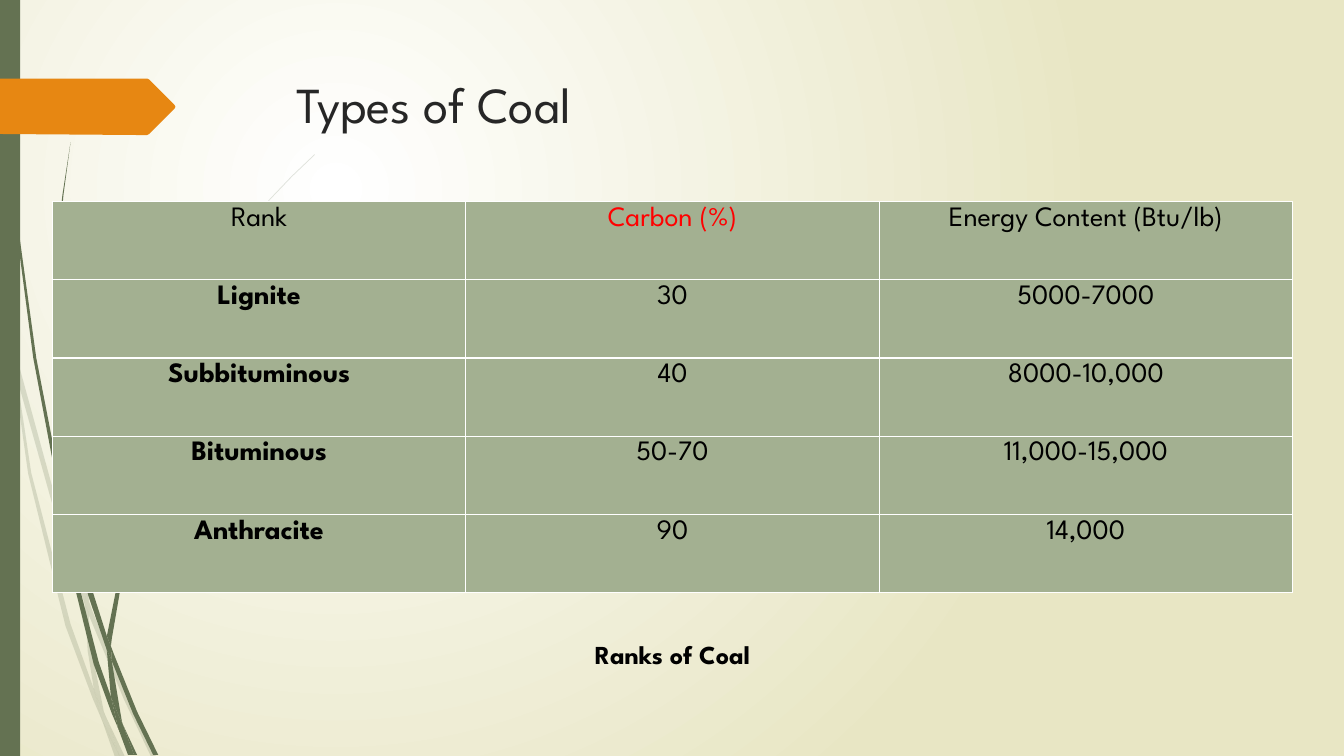
from lxml import etree
from pptx import Presentation
from pptx.dml.color import RGBColor
from pptx.enum.shapes import MSO_SHAPE
from pptx.enum.text import MSO_ANCHOR, PP_ALIGN
from pptx.oxml.ns import qn
from pptx.util import Inches, Pt

RECTANGLE = MSO_SHAPE.RECTANGLE
TOP = MSO_ANCHOR.TOP
LEFT, CENTER = PP_ALIGN.LEFT, PP_ALIGN.CENTER

THEME = {
    "font": "League Spartan",
    "title_size": 36, "table_size": 20, "caption_size": 18.5,
    "glow": "FFFFFF", "sand": "E8E6C4", "moss": "647252", "orange": "E78712",
    "cell": "A3B091", "border": "FFFFFF", "border_width": 1,
    "heading": "262626", "ink": "000000", "accent": "FF0000",
    "pale_opacity": 20,
}

TITLE = ("Types of Coal", (2.84, 0.68, 9.75, 1.4))
CAPTION = ("Ranks of Coal", (3.64, 6.29, 6.06, 0.38))
TABLE_BOX = (0.52, 2, 12.3, 3.88)
COAL_RANKS = [
    ("Rank", "Carbon (%)", "Energy Content (Btu/lb)"),
    ("Lignite", "30", "5000-7000"),
    ("Subbituminous", "40", "8000-10,000"),
    ("Bituminous", "50-70", "11,000-15,000"),
    ("Anthracite", "90", "14,000"),
]
ACCENT_CELL = (0, 1)

# Outlines of the grass blades, as (x, y) corners in inches
PALE_BLADES = [
    [(0.11, 3.5), (0.09, 3.22), (0, 2.82), (0, 2.99), (0.1, 3.44)],
    [(0.58, 5.22), (0.84, 5.99), (0.85, 5.86), (0.62, 5.2), (0.14, 3.45), (0.17, 3.76)],
    [(0.92, 6.07), (0.88, 5.96), (0.88, 6.1), (1.23, 6.94), (1.5, 7.51), (1.55, 7.51),
     (1.27, 6.92)],
    [(1.19, 7.51), (1.24, 7.51), (1.05, 7.11)],
    [(0.93, 6.83), (0.7, 6.19), (0.31, 4.69), (0.17, 3.76), (0.11, 3.5), (0.28, 4.7),
     (0.65, 6.21), (0.92, 6.93), (1.01, 7.14), (0.99, 7.07)],
    [(0.84, 5.99), (0.87, 6.46), (0.93, 6.83), (0.96, 6.92), (1.05, 7.11), (1.03, 7.06),
     (0.91, 6.46), (0.88, 6.1), (0.88, 6.08)],
    [(0.88, 5.84), (1.1, 4.62), (1.6, 3.49), (2.29, 2.45), (2.68, 1.98), (2.9, 1.75),
     (3.12, 1.54), (3.12, 1.53), (2.89, 1.75), (2.68, 1.97), (2.28, 2.44), (1.58, 3.48),
     (1.07, 4.61), (0.85, 5.84), (0.85, 5.86), (0.88, 5.96)],
    [(1.01, 7.14), (1.14, 7.51), (1.19, 7.51)],
    [(0.88, 6.08), (0.88, 6.1), (0.88, 5.96), (0.85, 5.86), (0.84, 5.99)],
    [(0.96, 6.92), (0.93, 6.83), (0.99, 7.07), (1.01, 7.14), (1.19, 7.51), (1.05, 7.11)],
]
DARK_BLADES = [
    [(0.07, 1.1), (0.17, 2.33), (0.33, 3.55), (0.56, 4.77), (0.57, 4.81), (0.55, 4.57),
     (0.55, 4.53), (0.36, 3.55), (0.19, 2.32), (0.08, 1.09), (0.05, 0.48), (0.04, 0),
     (0.03, 0), (0.04, 0.48)],
    [(0.88, 5.92), (1.06, 6.45), (1.06, 6.33), (1.06, 6.31), (0.93, 5.9), (0.6, 4.72),
     (0.64, 5.05)],
    [(1.13, 6.49), (1.1, 6.41), (1.11, 6.56), (1.32, 7.08), (1.52, 7.49), (1.57, 7.49),
     (1.36, 7.06)],
    [(1.1, 6.91), (0.98, 6.57), (0.72, 5.56), (0.64, 5.05), (0.57, 4.77), (0.68, 5.57),
     (0.93, 6.59), (1.11, 7.08), (1.17, 7.22), (1.16, 7.17)],
    [(0.6, 4.72), (0.58, 4.53), (0.54, 3.49), (0.58, 2.45), (0.63, 1.93), (0.7, 1.41),
     (0.62, 1.93), (0.56, 2.45), (0.52, 3.49), (0.55, 4.49)],
    [(1.33, 7.49), (1.36, 7.49), (1.22, 7.19)],
    [(0.57, 4.77), (0.64, 5.05), (0.6, 4.72), (0.55, 4.49), (0.55, 4.53)],
    [(1.11, 6.33), (1.25, 5.52), (1.58, 4.76), (2.05, 4.06), (2.31, 3.74), (2.45, 3.59),
     (2.61, 3.44), (2.6, 3.44), (2.45, 3.58), (2.31, 3.73), (2.04, 4.05), (1.56, 4.74),
     (1.22, 5.51), (1.06, 6.31), (1.1, 6.41)],
    [(1.17, 7.22), (1.27, 7.49), (1.31, 7.49)],
    [(1.06, 6.45), (1.1, 6.91), (1.16, 7.06), (1.22, 7.19), (1.21, 7.16), (1.11, 6.56),
     (1.09, 6.51)],
    [(1.06, 6.45), (1.09, 6.51), (1.11, 6.56), (1.1, 6.41), (1.06, 6.31), (1.06, 6.33)],
    [(1.16, 7.06), (1.1, 6.91), (1.16, 7.17), (1.17, 7.22), (1.3, 7.49), (1.33, 7.49),
     (1.22, 7.19)],
]
SIDE_BAR = (0, 0, 0.2, 7.5)
ARROW_TAB = [(1.73, 1.08), (1.48, 1.33), (1.46, 1.34), (1.36, 1.34), (0, 1.33), (0, 0.78),
             (1.46, 0.78), (1.48, 0.79), (1.73, 1.04), (1.74, 1.06)]


def rgb(name):
    return RGBColor.from_string(THEME[name])


def inches(values):
    return [Inches(value) for value in values]


def paint(shape, color, opacity=100):
    shape.shadow.inherit = False
    shape.line.fill.background()
    shape.fill.solid()
    shape.fill.fore_color.rgb = rgb(color)
    if opacity < 100:
        tone = shape.element.spPr.find(f"{qn('a:solidFill')}/{qn('a:srgbClr')}")
        etree.SubElement(tone, qn("a:alpha"), val=str(opacity * 1000))


def add_outline(page, corners, color, opacity=100):
    start, *rest = [inches(corner) for corner in corners]
    builder = page.shapes.build_freeform(*start)
    builder.add_line_segments(rest, close=True)
    paint(builder.convert_to_shape(), color, opacity)


def write(frame, text, size, color, align=LEFT, bold=False):
    para = frame.paragraphs[0]
    para.alignment = align
    span = para.add_run()
    span.text = text
    span.font.color.rgb = rgb(color)
    formats = {"name": THEME["font"], "size": Pt(THEME[size]), "bold": bold}
    for name, value in formats.items():
        setattr(span.font, name, value)


def add_text(page, text, place, *style):
    frame = page.shapes.add_textbox(*inches(place)).text_frame
    frame.word_wrap = True
    frame.vertical_anchor = TOP
    write(frame, text, *style)


def set_background(page):
    """Radial glow centred a quarter of the way in from the top left."""
    fill = page.background.fill
    fill.gradient()
    for stop, color in zip(fill.gradient_stops, ("glow", "sand")):
        stop.color.rgb = rgb(color)
    gradient = page.background._cSld.find(f".//{qn('a:gradFill')}")
    radial = etree.Element(qn("a:path"), {"path": "circle"})
    etree.SubElement(radial, qn("a:fillToRect"), l="50000", t="50000", r="100000", b="100000")
    gradient.replace(gradient.find(qn("a:lin")), radial)


def add_borders(cell):
    properties = cell._tc.get_or_add_tcPr()
    for side in "LRTB":
        line = etree.SubElement(properties, qn(f"a:ln{side}"), w=str(Pt(THEME["border_width"])))
        solid = etree.SubElement(line, qn("a:solidFill"))
        etree.SubElement(solid, qn("a:srgbClr"), val=THEME["border"])


def add_coal_table(page):
    shape = page.shapes.add_table(len(COAL_RANKS), len(COAL_RANKS[0]), *inches(TABLE_BOX))
    for row, values in enumerate(COAL_RANKS):
        for column, value in enumerate(values):
            cell = shape.table.cell(row, column)
            add_borders(cell)
            cell.fill.solid()
            cell.fill.fore_color.rgb = rgb("cell")
            color = "accent" if (row, column) == ACCENT_CELL else "ink"
            write(cell.text_frame, value, "table_size", color, CENTER, row > 0 and column == 0)


def main():
    deck = Presentation()
    deck.slide_width, deck.slide_height = Inches(13.33), Inches(7.5)
    page = deck.slides.add_slide(deck.slide_layouts[6])
    set_background(page)
    for blades, opacity in ((PALE_BLADES, THEME["pale_opacity"]), (DARK_BLADES, 100)):
        for blade in blades:
            add_outline(page, blade, "moss", opacity)
    paint(page.shapes.add_shape(RECTANGLE, *inches(SIDE_BAR)), "moss")
    add_outline(page, ARROW_TAB, "orange")
    add_text(page, *TITLE, "title_size", "heading")
    add_coal_table(page)
    add_text(page, *CAPTION, "caption_size", "ink", CENTER, True)
    deck.save("out.pptx")


if __name__ == "__main__":
    main()
